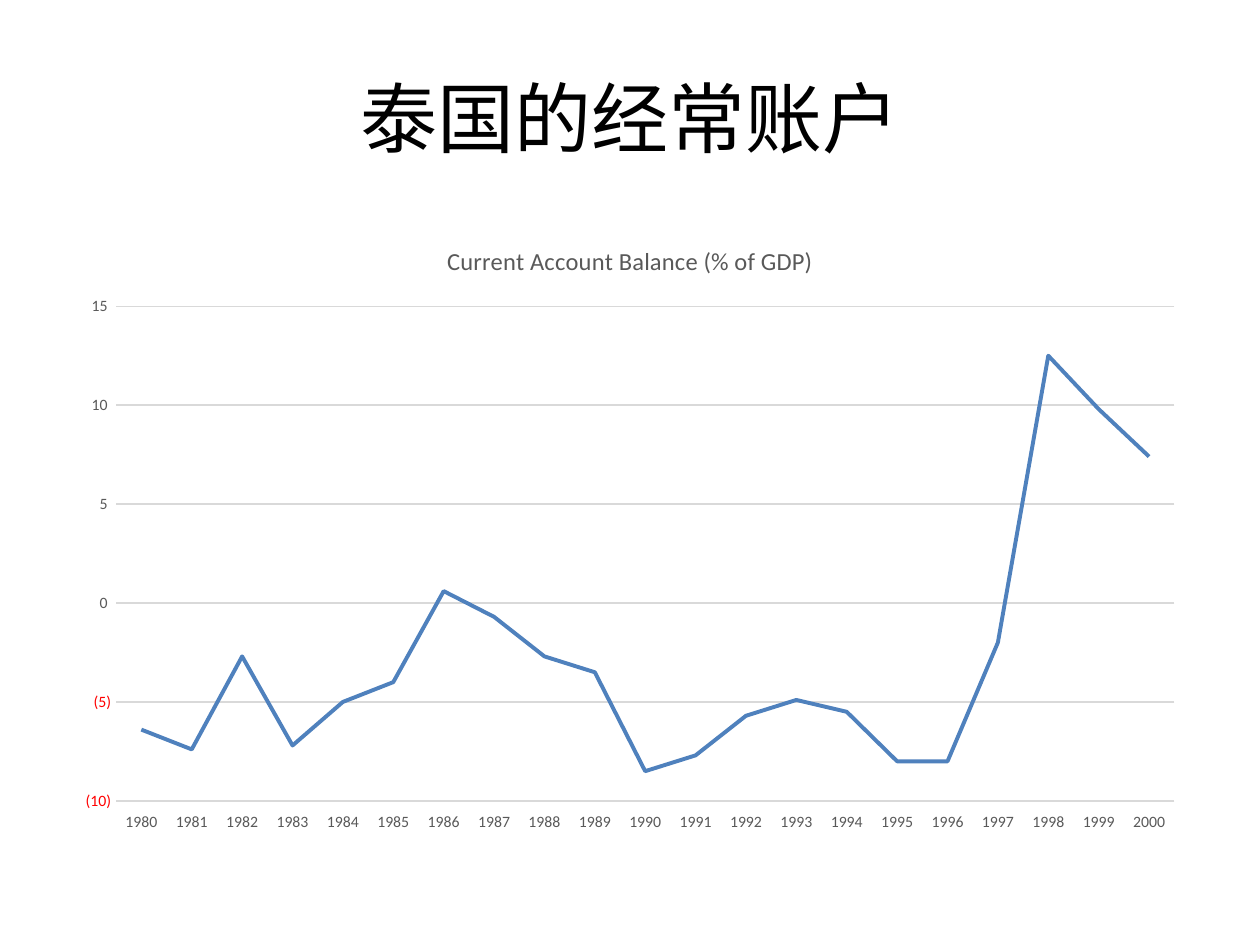
import pptx
import pptx.util
import pptx.chart.data
import pptx.dml.color
import pptx.enum.chart
import pptx.enum.text

Inches, Pt = pptx.util.Inches, pptx.util.Pt
RGBColor = pptx.dml.color.RGBColor

TITLE = "泰国的经常账户"
SERIES = "Current Account Balance (% of GDP)"
FIRST_YEAR = 1980
BALANCES = [-6.4, -7.4, -2.7, -7.2, -5, -4, 0.6, -0.7, -2.7, -3.5, -8.5,
            -7.7, -5.7, -4.9, -5.5, -8, -8, -2, 12.5, 9.8, 7.4]
FONT = "Calibri"
BLACK = RGBColor(0x00, 0x00, 0x00)
GRAY = RGBColor(0x59, 0x59, 0x59)
GRID = RGBColor(0xD9, 0xD9, 0xD9)
BLUE = RGBColor(0x4F, 0x81, 0xBD)


def style_font(font, size, color):
    font.name = FONT
    font.size = Pt(size)
    font.bold = False
    font.color.rgb = color


def style_line(line, color, width):
    line.color.rgb = color
    line.width = Pt(width)


def add_title(s):
    box = s.shapes.add_textbox(Inches(0.5), Inches(0.3), Inches(9), Inches(1.25))
    tf = box.text_frame
    tf.word_wrap = True
    tf.vertical_anchor = pptx.enum.text.MSO_ANCHOR.MIDDLE
    tf.text = TITLE
    p = tf.paragraphs[0]
    p.alignment = pptx.enum.text.PP_ALIGN.CENTER
    style_font(p.runs[0].font, 44, BLACK)


def add_balance_chart(s):
    data = pptx.chart.data.CategoryChartData()
    data.categories = [str(FIRST_YEAR + i) for i in range(len(BALANCES))]
    data.add_series(SERIES, BALANCES)
    chart = s.shapes.add_chart(
        pptx.enum.chart.XL_CHART_TYPE.LINE,
        Inches(0.5), Inches(1.75), Inches(9), Inches(4.95), data).chart
    style_font(chart.font, 10, BLACK)
    chart.has_legend = False
    chart.has_title = True
    tf = chart.chart_title.text_frame
    tf.text = SERIES
    style_font(tf.paragraphs[0].runs[0].font, 14, GRAY)
    chart.chart_title.include_in_layout = False

    years, values = chart.category_axis, chart.value_axis
    for axis in (years, values):
        axis.major_tick_mark = pptx.enum.chart.XL_TICK_MARK.NONE
        axis.minor_tick_mark = pptx.enum.chart.XL_TICK_MARK.NONE
        style_font(axis.tick_labels.font, 9, GRAY)
    years.tick_label_position = pptx.enum.chart.XL_TICK_LABEL_POSITION.LOW
    style_line(years.format.line, GRID, 0.75)

    values.minimum_scale, values.maximum_scale, values.major_unit = -10, 15, 5
    values.tick_labels.number_format = r"#,##0_);[Red]\(#,##0\)"
    values.tick_labels.number_format_is_linked = False
    values.format.line.fill.background()
    style_line(values.major_gridlines.format.line, GRID, 0.75)

    plot = chart.plots[0]
    plot.vary_by_categories = False
    series = plot.series[0]
    series.smooth = False
    series.marker.style = pptx.enum.chart.XL_MARKER_STYLE.NONE
    style_line(series.format.line, BLUE, 2.25)


def main():
    prs = pptx.Presentation()
    prs.slide_width, prs.slide_height = Inches(10), Inches(7.5)
    s = prs.slides.add_slide(prs.slide_layouts[6])
    add_balance_chart(s)
    add_title(s)
    prs.save("out.pptx")


if __name__ == "__main__":
    main()
